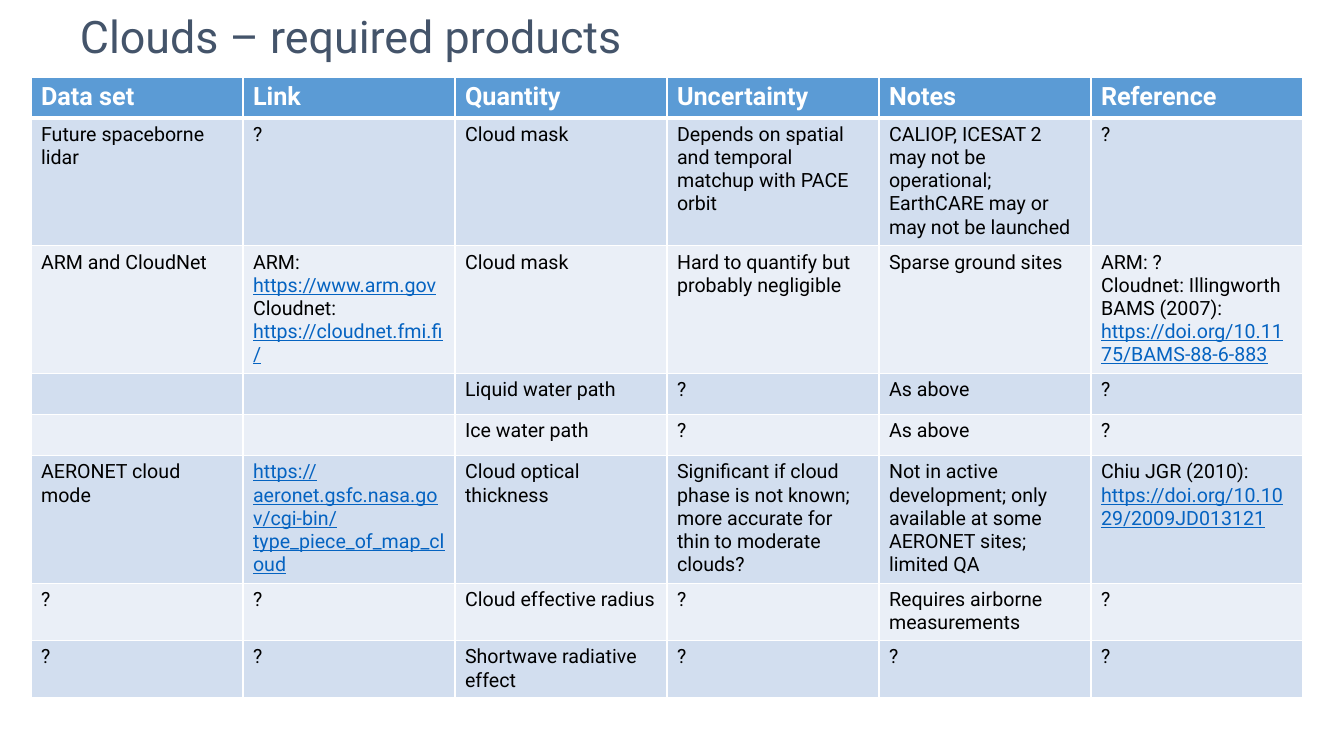
from lxml.etree import SubElement
from pptx import Presentation
from pptx.dml.color import RGBColor
from pptx.enum.text import MSO_ANCHOR
from pptx.oxml.ns import qn
from pptx.util import Emu, Pt

TITLE = "Clouds – required products"
HEADER = ("Data set", "Link", "Quantity", "Uncertainty", "Notes", "Reference")
PRODUCTS = [
    ("Future spaceborne lidar", "?", "Cloud mask",
     "Depends on spatial and temporal matchup with PACE orbit",
     "CALIOP, ICESAT 2 may not be operational; EarthCARE may or may not be launched", "?"),
    ("ARM and CloudNet",
     "ARM: https://www.arm.gov\nCloudnet: https://cloudnet.fmi.fi/",
     "Cloud mask", "Hard to quantify but probably negligible", "Sparse ground sites",
     "ARM: ?\nCloudnet: Illingworth BAMS (2007): https://doi.org/10.1175/BAMS-88-6-883"),
    ("", "", "Liquid water path", "?", "As above", "?"),
    ("", "", "Ice water path", "?", "As above", "?"),
    ("AERONET cloud mode",
     "https://aeronet.gsfc.nasa.gov/cgi-bin/type_piece_of_map_cloud",
     "Cloud optical thickness",
     "Significant if cloud phase is not known; more accurate for thin to moderate clouds?",
     "Not in active development; only available at some AERONET sites; limited QA",
     "Chiu JGR (2010): https://doi.org/10.1029/2009JD013121"),
    ("?", "?", "Cloud effective radius", "?", "Requires airborne measurements", "?"),
    ("?", "?", "Shortwave radiative effect", "?", "?", "?"),
]
ROW_HEIGHTS = (41, 126, 126, 41, 41, 126, 56, 56)
COLUMN_WIDTH = 212
TABLE_LEFT, TABLE_TOP = 31, 77

FONT = "Roboto"
WHITE, BLACK, LINK_BLUE, TITLE_GREY = "FFFFFF", "000000", "0563C1", "44546A"
HEADER_FILL, BAND_FILLS = "5B9BD5", ("EAEFF7", "D2DEEF")


def px(length):
    return Emu(round(length * 914400 / 100.8))


def color(value):
    return RGBColor.from_string(value)


def style(run, size, ink, bold=False, underline=False):
    run.font.name = FONT
    run.font.size = Pt(size)
    run.font.bold = bold
    run.font.underline = underline
    run.font.color.rgb = color(ink)


def write_paragraph(paragraph, line, size, ink, bold):
    before, scheme, address = line.partition("https")
    for text, is_link in ((before, False), (scheme + address, True)):
        if text:
            run = paragraph.add_run()
            run.text = text
            style(run, size, LINK_BLUE if is_link else ink, bold, is_link)


def set_borders(cell, top, bottom):
    properties = cell._tc.get_or_add_tcPr()
    for side, width in (("L", 1), ("R", 1), ("T", top), ("B", bottom)):
        line = SubElement(properties, qn(f"a:ln{side}"), w=str(Pt(width)))
        fill = SubElement(line, qn("a:solidFill"))
        SubElement(fill, qn("a:srgbClr"), val=WHITE)


def add_title(slide):
    title = slide.shapes.add_textbox(px(70), px(1), px(1182), px(76))
    frame = title.text_frame
    frame.word_wrap = True
    frame.vertical_anchor = MSO_ANCHOR.MIDDLE
    frame.text = TITLE
    frame.paragraphs[0].line_spacing = 0.9
    style(frame.paragraphs[0].runs[0], 32, TITLE_GREY)


def add_products(slide):
    rows = [HEADER, *PRODUCTS]
    products = slide.shapes.add_table(
        len(rows), len(HEADER), px(TABLE_LEFT), px(TABLE_TOP),
        px(COLUMN_WIDTH * len(HEADER)), px(sum(ROW_HEIGHTS))).table
    for column in products.columns:
        column.width = px(COLUMN_WIDTH)
    for r, (entries, height) in enumerate(zip(rows, ROW_HEIGHTS)):
        products.rows[r].height = px(height)
        is_header = r == 0
        size, ink = (18, WHITE) if is_header else (14, BLACK)
        for c, entry in enumerate(entries):
            cell = products.cell(r, c)
            set_borders(cell, 3 if r == 1 else 1, 3 if is_header else 1)
            cell.fill.solid()
            cell.fill.fore_color.rgb = color(HEADER_FILL if is_header else BAND_FILLS[r % 2])
            frame = cell.text_frame
            for i, line in enumerate(entry.split("\n")):
                paragraph = frame.add_paragraph() if i else frame.paragraphs[0]
                write_paragraph(paragraph, line, size, ink, is_header)


def main():
    deck = Presentation()
    deck.slide_width, deck.slide_height = px(1344), px(756)
    slide = deck.slides.add_slide(deck.slide_layouts[6])
    add_title(slide)
    add_products(slide)
    deck.save("out.pptx")


if __name__ == "__main__":
    main()
